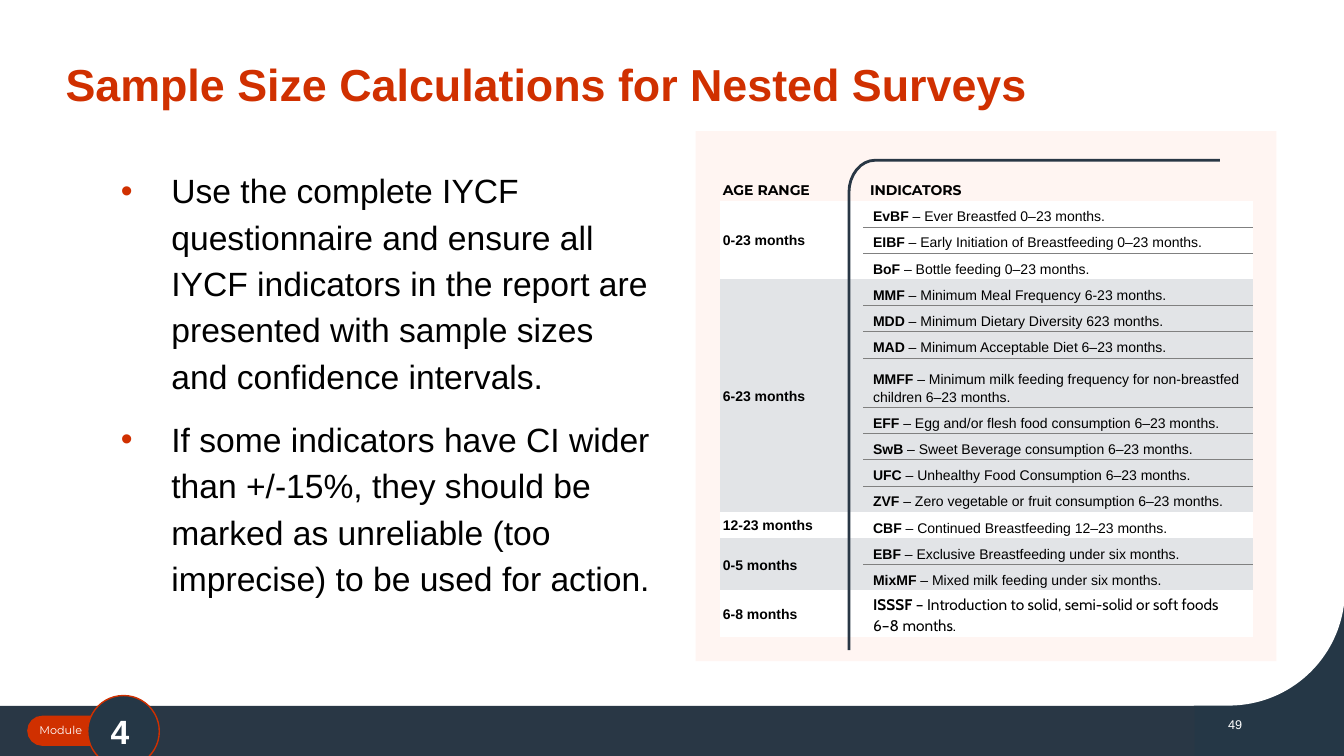
import math
import pptx
import pptx.dml.color
import pptx.enum.shapes
import pptx.enum.text
import pptx.oxml
import pptx.oxml.ns
import pptx.util
from pptx.util import Inches

NAVY, SLATE, RED, WHITE, BLACK, GREY = "253746", "293745", "D03000", "FFFFFF", "000000", "E2E4E7"
KINDS = pptx.enum.shapes.MSO_SHAPE
ANCHORS = pptx.enum.text.MSO_ANCHOR


def rgb(value):
    return pptx.dml.color.RGBColor.from_string(value)


def write(paragraph, text, size, color, bold=False, face="Arial"):
    for index, line in enumerate(text.split("\n")):
        if index:
            paragraph.add_line_break()
        run = paragraph.add_run()
        run.text = line
        run.font.size = pptx.util.Pt(size)
        run.font.bold = bold
        run.font.name = face
        run.font.color.rgb = rgb(color)


deck = pptx.Presentation()
deck.slide_width, deck.slide_height = Inches(13.33), Inches(7.5)
slide = deck.slides.add_slide(deck.slide_layouts[6])
shapes = slide.shapes

tag_outline = [(Inches(1.47), Inches(7.1))]
for step in range(9):
    angle = math.pi * (0.5 + step / 8)
    tag_outline.append((Inches(0.42 + 0.15 * math.cos(angle)), Inches(7.25 - 0.15 * math.sin(angle))))
tag_outline.append((Inches(1.47), Inches(7.4)))

divider_outline = [(Inches(8.42), Inches(6.45))]
for step in range(9):
    angle = math.pi * (1 - step / 16)
    divider_outline.append((Inches(8.68 + 0.26 * math.cos(angle)), Inches(1.91 - 0.32 * math.sin(angle))))
divider_outline.append((Inches(12.1), Inches(1.59)))

backdrop = [
    (KINDS.RECTANGLE, (11.84, 5.7, 1.5, 1.8), NAVY, None),
    (KINDS.RECTANGLE, (0, 7, 11.85, 0.5), SLATE, None),
    (KINDS.ROUND_2_DIAG_RECTANGLE, (0, 0.09, 13.34, 6.91), WHITE, None),
    (None, tag_outline, RED, None),
    (KINDS.OVAL, (0.87, 6.9, 0.71, 0.71), NAVY, RED),
    (KINDS.RECTANGLE, (6.9, 1.3, 5.76, 5.26), "FFF5F2", None),
]
for kind, geometry, fill, outline in backdrop:
    if kind is None:
        builder = shapes.build_freeform(*geometry[0])
        builder.add_line_segments(geometry[1:], close=True)
        part = builder.convert_to_shape()
    else:
        part = shapes.add_shape(kind, *map(Inches, geometry))
    part.shadow.inherit = False
    part.fill.solid()
    part.fill.fore_color.rgb = rgb(fill)
    if outline:
        part.line.color.rgb = rgb(outline)
        part.line.width = pptx.util.Pt(1)
    else:
        part.line.fill.background()

captions = [
    ("Sample Size Calculations for Nested Surveys", (0.52, 0.43, 11.48, 1.17), (0.13, 0.13), 32, RED, True, "Arial"),
    ("49", (12.06, 7.06, 0.36, 0.25), (0.1, 0.05), 9, WHITE, False, "Arial"),
    ("Module", (0.39, 7.17, 1.02, 0.15), (0, 0.01), 8, WHITE, False, "Montserrat"),
    ("4", (1, 7, 0.46, 0.5), (0.1, 0.05), 24, WHITE, True, "Arial"),
]
for text, place, (side, edge), size, color, bold, face in captions:
    frame = shapes.add_textbox(*map(Inches, place)).text_frame
    frame.word_wrap = True
    frame.margin_left = frame.margin_right = Inches(side)
    frame.margin_top = frame.margin_bottom = Inches(edge)
    if text == "49":
        frame.word_wrap = False
        frame.paragraphs[0].alignment = pptx.enum.text.PP_ALIGN.RIGHT
    write(frame.paragraphs[0], text, size, color, bold, face)

guidance = shapes.add_textbox(Inches(1.04), Inches(1.5), Inches(5.61), Inches(4.87)).text_frame
guidance.word_wrap = True
guidance.margin_left = guidance.margin_right = Inches(0.13)
guidance.margin_top = guidance.margin_bottom = Inches(0.13)
points = [
    "Use the complete IYCF questionnaire and ensure all IYCF indicators in the report are "
    "presented with sample sizes and confidence intervals.",
    "If some indicators have CI wider than +/-15%, they should be marked as unreliable "
    "(too imprecise) to be used for action.",
]
for index, text in enumerate(points):
    point = guidance.add_paragraph() if index else guidance.paragraphs[0]
    point.line_spacing = 1.15
    point.space_after = pptx.util.Pt(0 if index else 12)
    properties = point._p.get_or_add_pPr()
    properties.set("marL", str(Inches(0.53)))
    properties.set("indent", str(Inches(-0.5)))
    for markup in (f'<a:buClr %s><a:srgbClr val="{RED}"/></a:buClr>', '<a:buFont %s typeface="Arial"/>', '<a:buChar %s char="•"/>'):
        properties.append(pptx.oxml.parse_xml(markup % pptx.oxml.ns.nsdecls("a")))
    write(point, text, 24, BLACK)

age_groups = [
    ("0-23 months", [
        ("EvBF", "Ever Breastfed 0–23 months."),
        ("EIBF", "Early Initiation of Breastfeeding 0–23 months."),
        ("BoF", "Bottle feeding 0–23 months."),
    ]),
    ("6-23 months", [
        ("MMF", "Minimum Meal Frequency 6-23 months."),
        ("MDD", "Minimum Dietary Diversity 623 months."),
        ("MAD", "Minimum Acceptable Diet 6–23 months."),
        ("MMFF", "Minimum milk feeding frequency for non-breastfed children 6–23 months."),
        ("EFF", "Egg and/or flesh food consumption 6–23 months."),
        ("SwB", "Sweet Beverage consumption 6–23 months."),
        ("UFC", "Unhealthy Food Consumption 6–23 months."),
        ("ZVF", "Zero vegetable or fruit consumption 6–23 months."),
    ]),
    ("12-23 months", [("CBF", "Continued Breastfeeding 12–23 months.")]),
    ("0-5 months", [
        ("EBF", "Exclusive Breastfeeding under six months."),
        ("MixMF", "Mixed milk feeding under six months."),
    ]),
    ("6-8 months", [("ISSSF", "Introduction to solid, semi-solid or soft foods \n6–8 months.")]),
]
table = shapes.add_table(16, 2, Inches(7.14), Inches(1.55), Inches(5.29), Inches(4.76)).table
table.first_row = table.horz_banding = False
style = table._tbl.tblPr.find(pptx.oxml.ns.qn("a:tableStyleId"))
style.text = "{2D5ABB26-0587-4C30-8999-92F81FD0307C}"
table.columns[0].width, table.columns[1].width = Inches(1.42), Inches(3.87)
row_heights = {0: 0.44, 7: 0.49, 15: 0.28}
for index, row in enumerate(table.rows):
    row.height = Inches(row_heights.get(index, 0.26))
    for cell in row.cells:
        cell.margin_left = cell.margin_right = Inches(0.03)
        cell.margin_top = cell.margin_bottom = Inches(0.02)
        cell.vertical_anchor = ANCHORS.BOTTOM
        cell.text_frame.paragraphs[0].line_spacing = 1.15
        cell.fill.background()
for column, heading in enumerate(("AGE RANGE", " INDICATORS")):
    write(table.cell(0, column).text_frame.paragraphs[0], heading, 10, BLACK, True, "Montserrat")

rule_fill = '<a:solidFill><a:srgbClr val="808080"/></a:solidFill>'
first = 1
for group, (age, indicators) in enumerate(age_groups):
    last = first + len(indicators) - 1
    shade = GREY if group % 2 else WHITE
    age_cell = table.cell(first, 0)
    if last > first:
        age_cell.merge(table.cell(last, 0))
    age_cell.vertical_anchor = ANCHORS.MIDDLE
    write(age_cell.text_frame.paragraphs[0], age, 10, BLACK, True)
    for index, (code, meaning) in enumerate(indicators, first):
        cell = table.cell(index, 1)
        cell.margin_left = cell.margin_right = Inches(0.1)
        size, face = (11, "Cabin") if code == "ISSSF" else (10, "Arial")
        write(cell.text_frame.paragraphs[0], code, size, BLACK, True, face)
        write(cell.text_frame.paragraphs[0], " – " + meaning, size, BLACK, False, face)
        for position, (side, ruled) in enumerate((("lnT", index > first), ("lnB", index < last))):
            cell._tc.get_or_add_tcPr().insert(position, pptx.oxml.parse_xml(
                f'<a:{side} {pptx.oxml.ns.nsdecls("a")} w="3175">'
                f'{rule_fill if ruled else "<a:noFill/>"}</a:{side}>'))
        for filled in (cell, table.cell(index, 0)):
            filled.fill.solid()
            filled.fill.fore_color.rgb = rgb(shade)
    first = last + 1

builder = shapes.build_freeform(*divider_outline[0])
builder.add_line_segments(divider_outline[1:], close=False)
divider = builder.convert_to_shape()
divider.shadow.inherit = False
divider.fill.background()
divider.line.color.rgb = rgb(SLATE)
divider.line.width = pptx.util.Pt(2)

deck.save("out.pptx")
